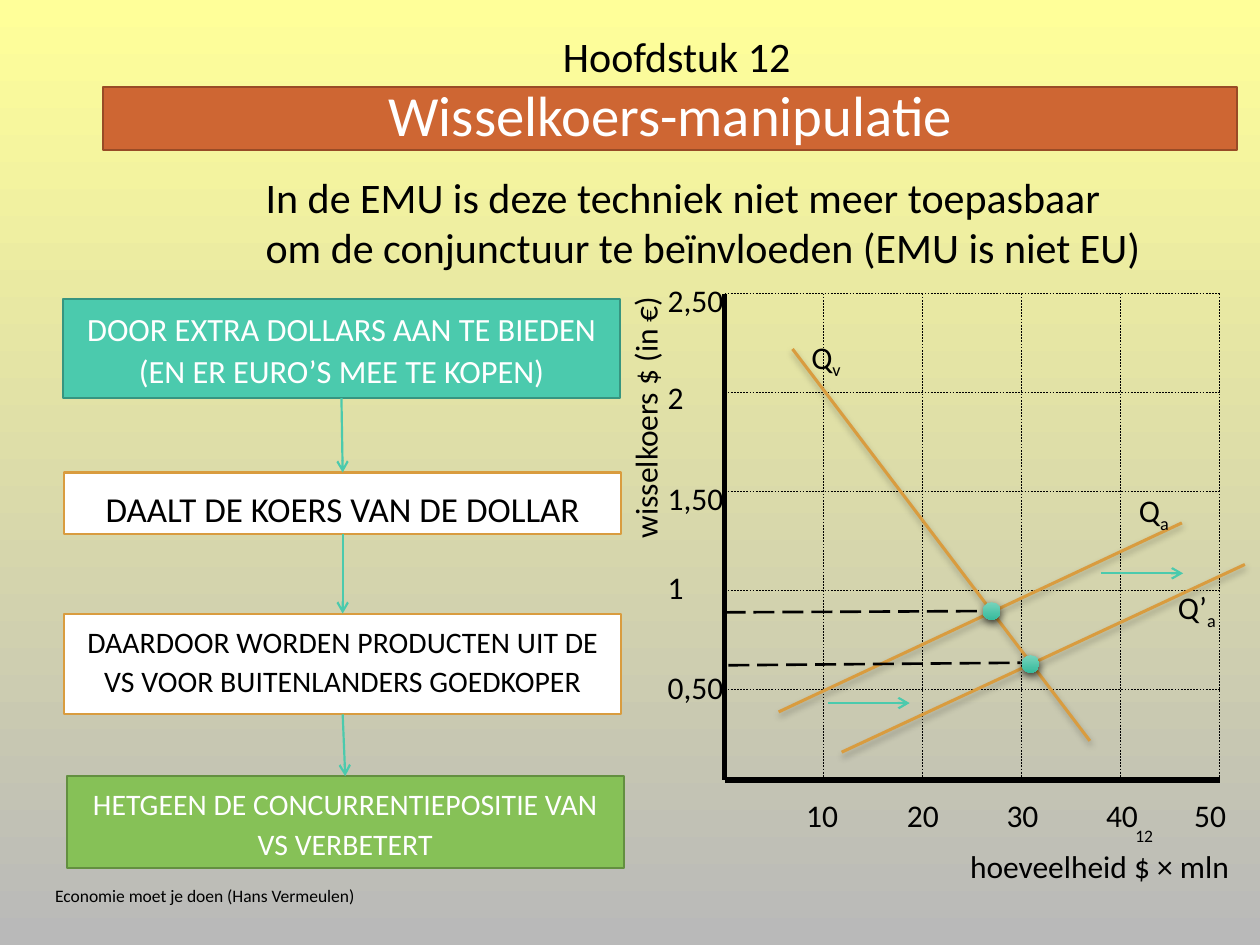
"""Build the slide on exchange-rate manipulation."""
from dataclasses import dataclass

from lxml import etree
from pptx import Presentation
from pptx.dml.color import RGBColor
from pptx.enum.dml import MSO_LINE
from pptx.enum.shapes import MSO_CONNECTOR, MSO_SHAPE
from pptx.enum.text import MSO_ANCHOR, MSO_AUTO_SIZE, PP_ALIGN
from pptx.oxml.ns import qn
from pptx.util import Inches, Pt

STRAIGHT = MSO_CONNECTOR.STRAIGHT
OVAL = MSO_SHAPE.OVAL
DASH, LONG = MSO_LINE.DASH, MSO_LINE.LONG_DASH
LEFT, CENTER, RIGHT = PP_ALIGN.LEFT, PP_ALIGN.CENTER, PP_ALIGN.RIGHT
TOP, MIDDLE = MSO_ANCHOR.TOP, MSO_ANCHOR.MIDDLE
FIT, FIXED = MSO_AUTO_SIZE.SHAPE_TO_FIT_TEXT, MSO_AUTO_SIZE.NONE

BLACK = RGBColor(0x00, 0x00, 0x00)
WHITE = RGBColor(0xFF, 0xFF, 0xFF)
YELLOW = RGBColor(0xFF, 0xFF, 0x99)
GRAY = RGBColor(0xB9, 0xB9, 0xB9)
RUST = RGBColor(0xCE, 0x66, 0x33)
BROWN = RGBColor(0x98, 0x4B, 0x26)
TEAL = RGBColor(0x4B, 0xCA, 0xAD)
PINE = RGBColor(0x37, 0x95, 0x80)
GOLD = RGBColor(0xD9, 0x9C, 0x3F)
GREEN = RGBColor(0x86, 0xC1, 0x57)
MOSS = RGBColor(0x63, 0x8F, 0x40)
MINT = RGBColor(0x77, 0xD4, 0xBC)
JADE = RGBColor(0x36, 0xBA, 0x9C)

X0, X1, Y0, Y1 = 5.75, 9.68, 2.33, 6.19
STEP = (X1 - X0) / 5


@dataclass
class Panel:
    text: str
    at: tuple
    fill: RGBColor
    edge: RGBColor
    ink: RGBColor
    size: float
    lead: float
    anchor: MSO_ANCHOR = TOP


@dataclass
class Label:
    text: str
    at: tuple
    size: float = 18
    sub: str = ""
    turn: int = 0
    wrap: bool = False
    align: PP_ALIGN = LEFT
    anchor: MSO_ANCHOR = TOP
    auto: MSO_AUTO_SIZE = FIT


@dataclass
class Line:
    ends: tuple
    color: RGBColor = BLACK
    width: float = 0.25
    dash: MSO_LINE | None = None
    arrow: bool = False
    shade: bool = False


HEAD = Panel("Wisselkoers-manipulatie", (0.82, 0.69, 9, 0.5),
             RUST, BROWN, WHITE, 32.4, 0.9, MIDDLE)
STEPS = [
    Panel("DOOR EXTRA DOLLARS AAN TE BIEDEN (EN ER EURO’S MEE TE KOPEN)",
          (0.5, 2.37, 4.42, 0.79), TEAL, PINE, WHITE, 18.5, 1.1),
    Panel("DAALT DE KOERS VAN DE DOLLAR",
          (0.51, 3.75, 4.42, 0.49), WHITE, GOLD, BLACK, 20, 1.2),
    Panel("DAARDOOR WORDEN PRODUCTEN UIT DE VS VOOR BUITENLANDERS GOEDKOPER",
          (0.51, 4.87, 4.42, 0.8), WHITE, GOLD, BLACK, 17, 1.1),
    Panel("HETGEEN DE CONCURRENTIEPOSITIE VAN VS VERBETERT",
          (0.53, 6.16, 4.42, 0.73), GREEN, MOSS, WHITE, 17, 1.1),
]
LABELS = [
    Label("Economie moet je doen (Hans Vermeulen)", (0.34, 6.91, 5.47, 0.4),
          10, wrap=True, anchor=MIDDLE, auto=FIXED),
    Label("12", (8.62, 6.43, 0.63, 0.4), 10, wrap=True, align=RIGHT,
          anchor=MIDDLE, auto=FIXED),
    Label("hoeveelheid $ × mln", (7.6, 6.67, 2.29, 0.4)),
    Label("wisselkoers $ (in €)", (4.05, 3.1, 2.14, 0.4), turn=270),
    Label("Q", (6.34, 2.63, 0.45, 0.4), sub="v"),
    Label("Q", (8.94, 3.85, 0.45, 0.4), sub="a"),
    Label("Q’", (9.25, 4.62, 0.51, 0.4), sub="a"),
    Label("Hoofdstuk 12", (4.37, 0.19, 2.44, 0.5), 24, wrap=True),
    Label("In de EMU is deze techniek niet meer toepasbaar om de conjunctuur "
          "te beïnvloeden (EMU is niet EU)", (2.01, 1.31, 7.24, 0.91), 24,
          wrap=True),
]
ROWS = {"0,50": 5.25, "1": 4.46, "1,50": 3.75, "2": 2.95, "2,50": 2.18}
COLS = {"10": 6.3, "20": 7.1, "30": 7.89, "40": 8.68, "50": 9.38}
LABELS += [Label(text, (5.2, y, 0.65 if "," in text else 0.33, 0.4))
           for text, y in ROWS.items()]
LABELS += [Label(text, (x, 6.27, 0.46, 0.4)) for text, x in COLS.items()]

AXES = [Line((X0, Y0, X0, Y1), width=3), Line((X1, Y1, X0, Y1), width=3)]
GRID = [Line((X0, Y0 + i * STEP, X1, Y0 + i * STEP), dash=DASH)
        for i in range(5)]
GRID += [Line((X0 + i * STEP, Y0, X0 + i * STEP, Y1), dash=DASH)
         for i in range(1, 6)]
CURVES = [Line(ends, GOLD, 1.75, shade=True) for ends in (
    (6.18, 5.65, 9.38, 4.15), (6.29, 2.77, 8.65, 5.88),
    (6.68, 5.97, 9.88, 4.48))]
GUIDES = [Line(ends, width=1.5, dash=LONG) for ends in (
    (5.75, 4.86, 7.76, 4.85), (5.78, 5.28, 8.1, 5.26))]
SHIFTS = [Line((x, y, x + 0.65, y), TEAL, 1.25, arrow=True)
          for x, y in ((8.74, 4.55), (6.57, 5.58))]
DOTS = [(7.8, 4.78), (8.11, 5.2)]


def blend(fill, first: RGBColor, last: RGBColor) -> None:
    """Fill from top to bottom."""
    fill.gradient()
    fill.gradient_angle = 270
    for stop, color in zip(fill.gradient_stops, (first, last)):
        stop.color.rgb = color


def cast(node, alpha: int, blur: float, dist: float) -> None:
    """Add a soft black shadow below."""
    shade = etree.SubElement(node, qn("a:outerShdw"), blurRad=str(Pt(blur)),
                             dist=str(Pt(dist)), dir="5400000",
                             rotWithShape="0")
    color = etree.SubElement(shade, qn("a:srgbClr"), val=str(BLACK))
    etree.SubElement(color, qn("a:alpha"), val=str(alpha * 1000))


def write(para, text: str, size: float, ink: RGBColor):
    """Add a run in the slide font."""
    run = para.add_run()
    run.text = text
    look = {"name": "Calibri", "size": Pt(size), "bold": False}
    for key, value in look.items():
        setattr(run.font, key, value)
    run.font.color.rgb = ink
    return run


def put_panel(shape, panel: Panel) -> None:
    """Place and format a placeholder."""
    place = dict(zip(("left", "top", "width", "height"),
                     map(Inches, panel.at)))
    for key, value in place.items():
        setattr(shape, key, value)
    shape.fill.solid()
    shape.fill.fore_color.rgb = panel.fill
    shape.line.color.rgb = panel.edge
    shape.line.width = Pt(1.25)
    frame = shape.text_frame
    frame.auto_size, frame.vertical_anchor = FIXED, panel.anchor
    para = frame.paragraphs[0]
    props = para._p.get_or_add_pPr()
    props.set("marL", "0")
    props.set("indent", "0")
    etree.SubElement(props, qn("a:buNone"))
    look = {"alignment": CENTER, "line_spacing": panel.lead,
            "space_before": Pt(0)}
    for key, value in look.items():
        setattr(para, key, value)
    write(para, panel.text, panel.size, panel.ink)


def put_label(shapes, label: Label) -> None:
    """Draw a text box."""
    box = shapes.add_textbox(*map(Inches, label.at))
    box.rotation = label.turn
    look = {"word_wrap": label.wrap, "auto_size": label.auto,
            "vertical_anchor": label.anchor}
    for key, value in look.items():
        setattr(box.text_frame, key, value)
    para = box.text_frame.paragraphs[0]
    para.alignment = label.align
    write(para, label.text, label.size, BLACK)
    if label.sub:
        run = write(para, label.sub, label.size, BLACK)
        run._r.get_or_add_rPr().set("baseline", "-25000")


def put_line(shapes, line: Line):
    """Draw a straight connector."""
    link = shapes.add_connector(STRAIGHT, *map(Inches, line.ends))
    link.line.color.rgb = line.color
    link.line.width = Pt(line.width)
    if line.dash:
        link.line.dash_style = line.dash
    props = link._element.spPr
    if line.arrow:
        etree.SubElement(props.find(qn("a:ln")), qn("a:tailEnd"), type="arrow")
    node = etree.SubElement(props, qn("a:effectLst"))
    if line.shade:
        cast(node, 28, 4, 2)
    return link


def put_dot(shapes, x: float, y: float) -> None:
    """Mark a crossing point."""
    dot = shapes.add_shape(OVAL, *map(Inches, (x, y, 0.14, 0.14)))
    blend(dot.fill, MINT, JADE)
    dot.line.fill.background()
    dot.shadow.inherit = False
    cast(dot._element.spPr.find(qn("a:effectLst")), 69, 5, 2)


def main() -> None:
    """Build and save the slide."""
    deck = Presentation()
    deck.slide_width, deck.slide_height = Inches(10), Inches(7.5)
    slide = deck.slides.add_slide(deck.slide_layouts[4])
    shapes = slide.shapes
    blend(slide.background.fill, YELLOW, GRAY)
    holders = list(slide.placeholders)
    for shape, panel in zip(holders, [HEAD] + STEPS):
        put_panel(shape, panel)
    for line in AXES + GRID + CURVES + GUIDES + SHIFTS:
        put_line(shapes, line)
    for upper, lower in zip(holders[1:], holders[2:]):
        link = put_line(shapes, Line((0, 0, 1, 1), TEAL, 1.25, arrow=True))
        link.begin_connect(upper, 2)
        link.end_connect(lower, 0)
    for label in LABELS:
        put_label(shapes, label)
    for x, y in DOTS:
        put_dot(shapes, x, y)
    deck.save("out.pptx")


if __name__ == "__main__":
    main()
